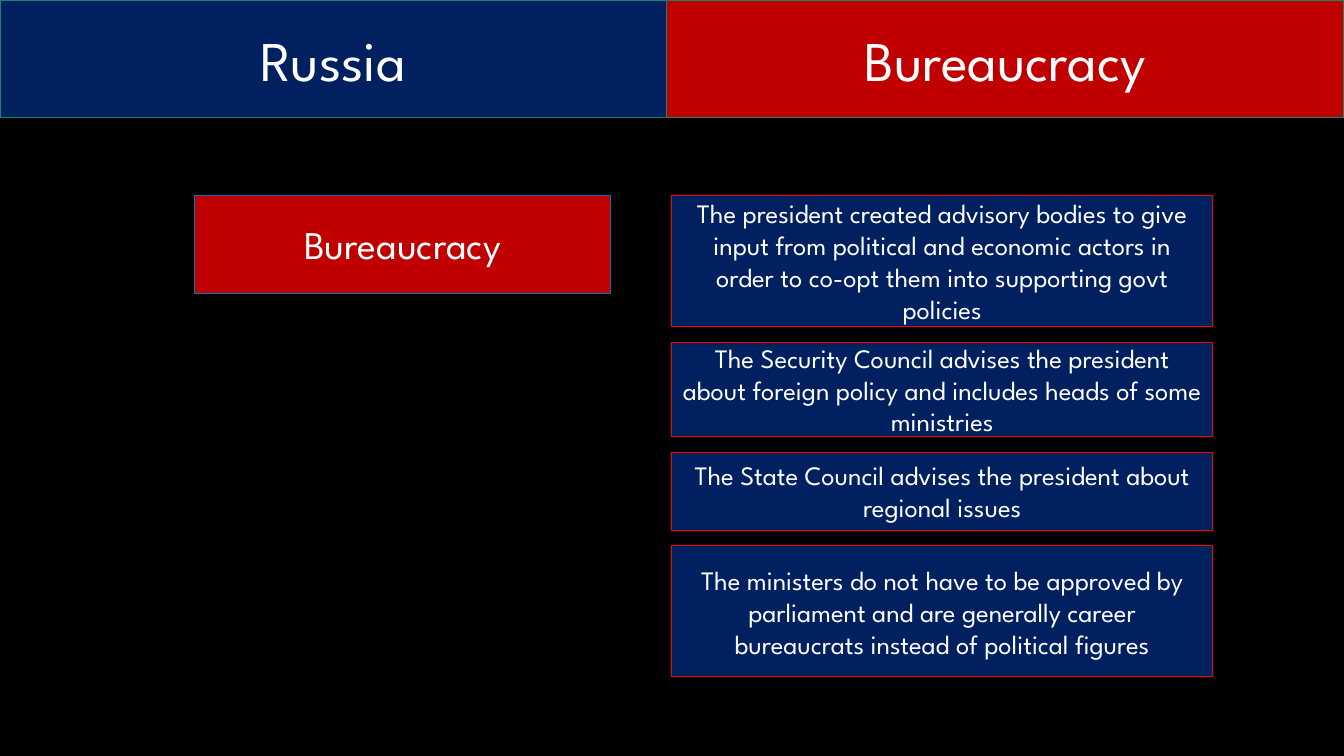
from pptx import Presentation
from pptx.dml.color import RGBColor
from pptx.enum.shapes import MSO_SHAPE as Shape
from pptx.enum.text import MSO_ANCHOR as Anchor, PP_ALIGN as Align
from pptx.util import Pt

NAVY, RED, WHITE = "002060", "C00000", "FFFFFF"
GREEN, BLUE, BRIGHT = "1E8168", "0070C0", "FF0000"


def color(hex):
    return RGBColor.from_string(hex)


def box(text, left, top, width, height, fill, edge, weight, size):
    rect = slide.shapes.add_shape(
        Shape.RECTANGLE, Pt(left), Pt(top), Pt(width), Pt(height))
    rect.shadow.inherit = False
    rect.fill.solid()
    rect.fill.fore_color.rgb = color(fill)
    rect.line.color.rgb = color(edge)
    rect.line.width = Pt(weight)
    frame = rect.text_frame
    frame.word_wrap = True
    frame.vertical_anchor = Anchor.MIDDLE
    para = frame.paragraphs[0]
    para.text = text
    para.alignment = Align.CENTER
    para.font.name = "League Spartan"
    para.font.size = Pt(size)
    para.font.color.rgb = color(WHITE)


# Slide with black background
deck = Presentation()
deck.slide_width, deck.slide_height = Pt(960), Pt(540)
slide = deck.slides.add_slide(deck.slide_layouts[6])
slide.background.fill.solid()
slide.background.fill.fore_color.rgb = color("000000")

# Header band
split = 476
box("Russia", 0, 0, split, 84, NAVY, GREEN, 1, 40)
box("Bureaucracy", split, 0, 960 - split, 84, RED, GREEN, 1, 40)

# Topic
top = 139.5
box("Bureaucracy", 139, top, 297, 70, RED, BLUE, 1, 28)

# Stack of facts
facts = [
    ("The president created advisory bodies to give input from political and "
     "economic actors in order to co-opt them into supporting govt policies", 93.6),
    ("The Security Council advises the president about foreign policy and "
     "includes heads of some ministries", 67.5),
    ("The State Council advises the president about regional issues", 55.5),
    ("The ministers do not have to be approved by parliament and are generally "
     "career bureaucrats instead of political figures", 93.6),
]
gap = 11.3
for text, height in facts:
    box(text, 480, top, 386, height, NAVY, BRIGHT, 0.75, 19)
    top += height + gap

deck.save("out.pptx")
